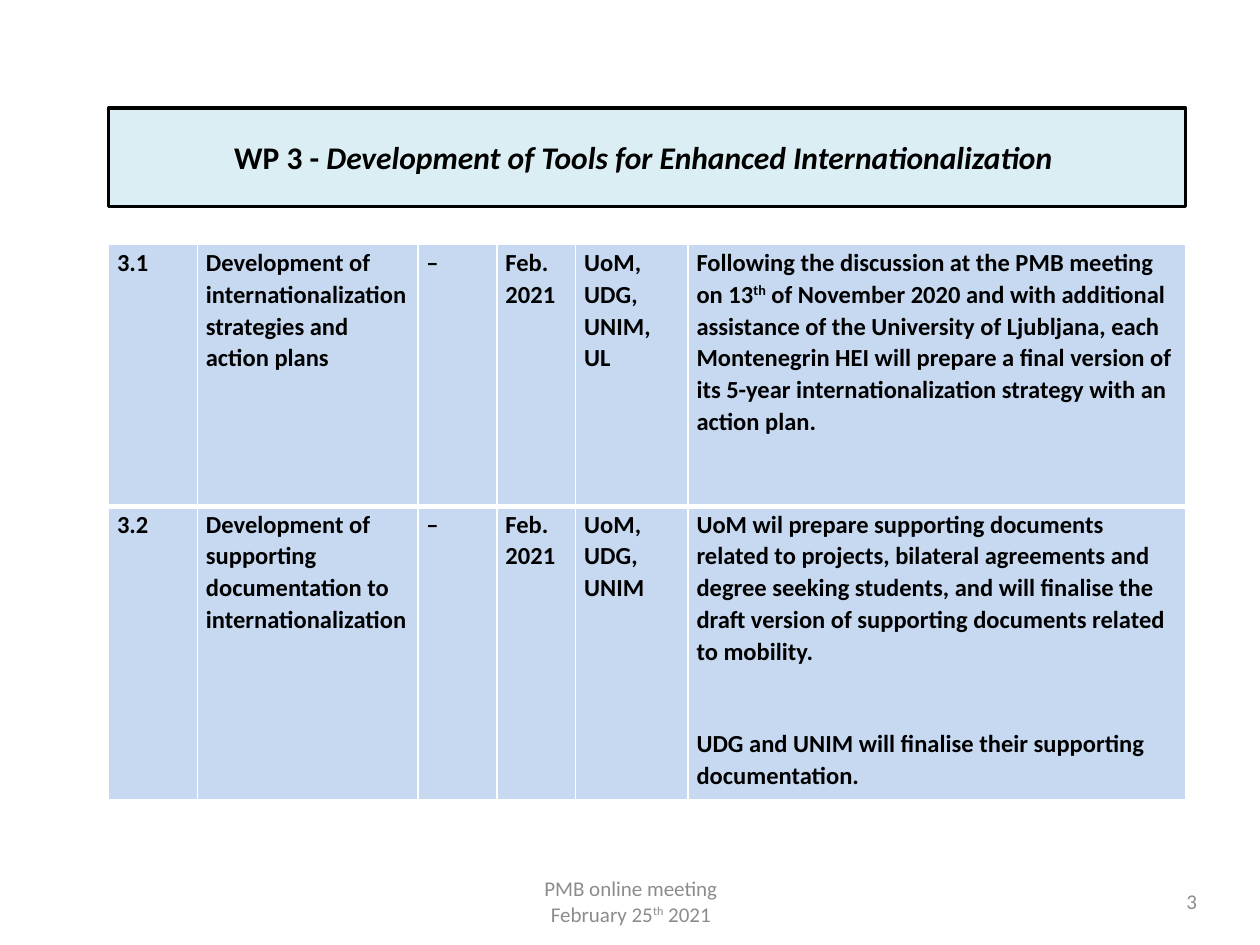
from dataclasses import dataclass

from lxml import etree
from pptx import Presentation
from pptx.dml.color import RGBColor
from pptx.enum.text import MSO_ANCHOR, MSO_AUTO_SIZE, PP_ALIGN
from pptx.oxml.ns import qn
from pptx.util import Pt

CENTER, LEFT, RIGHT = PP_ALIGN.CENTER, PP_ALIGN.LEFT, PP_ALIGN.RIGHT
MIDDLE = MSO_ANCHOR.MIDDLE
NO_AUTOFIT = MSO_AUTO_SIZE.NONE
TITLE_ONLY = 5

FONT = "Calibri"
COLORS = {
    "text": "000000",
    "footer": "8C8C8C",
    "title_fill": "DBEEF4",
    "cell_fill": "C6D9F1",
    "border": "FFFFFF",
}

LEFT_EDGE = 62
CONTENT_WIDTH = 615.5
TABLE_TOP = 139.8
COLUMN_WIDTHS = [50.8, 126, 45.2, 45, 64.2, 284.3]
ROW_HEIGHTS = [149.6, 167.8]
THIN, THICK = 1, 3
PARAGRAPH_GAP = 34.3


@dataclass
class Run:
    text: str
    italic: bool = False
    superscript: bool = False


@dataclass
class Style:
    size: float
    color: str
    bold: bool = False
    align: PP_ALIGN = LEFT


@dataclass
class Footer:
    left: float
    width: float
    inset_left: float
    style: Style
    paragraphs: list[list[Run]]


@dataclass
class Task:
    number: str
    name: str
    note: str
    deadline: str
    partners: str
    status: list[list[Run]]

    def cells(self) -> list[list[list[Run]]]:
        labels = (self.number, self.name, self.note, self.deadline, self.partners)
        return [[[Run(label)]] for label in labels] + [self.status]


TITLE_STYLE = Style(18, "text", bold=True, align=CENTER)
CELL_STYLE = Style(14, "text", bold=True)

TITLE = [
    Run("WP 3 - "),
    Run("Development of Tools for Enhanced Internationalization ", italic=True),
]

TASKS = [
    Task("3.1", "Development of internationalization strategies and action plans",
         "–", "Feb. 2021", "UoM, UDG, UNIM, UL",
         [[Run("Following the discussion at the PMB meeting on 13"),
           Run("th", superscript=True),
           Run(" of November 2020 and with additional assistance of the University "
               "of Ljubljana, each Montenegrin HEI will prepare a final version of "
               "its 5-year internationalization strategy with an action plan.")]]),
    Task("3.2", "Development of supporting documentation to internationalization",
         "–", "Feb. 2021", "UoM, UDG, UNIM",
         [[Run("UoM wil prepare supporting documents related to projects, bilateral "
               "agreements and degree seeking students, and will finalise the draft "
               "version of supporting documents related to mobility.")],
          [Run("UDG and UNIM will finalise their supporting documentation.")]]),
]

FOOTERS = [
    Footer(150.5, 420, 0, Style(12, "footer", align=CENTER),
           [[Run("PMB online meeting")],
            [Run("February 25"), Run("th", superscript=True), Run(" 2021")]]),
    Footer(575.3, 108.7, 7.2, Style(12, "footer", align=RIGHT), [[Run("3")]]),
]


def rgb(name: str) -> RGBColor:
    return RGBColor.from_string(COLORS[name])


def write(tf, paragraphs: list[list[Run]], style: Style) -> None:
    for i, runs in enumerate(paragraphs):
        p = tf.add_paragraph() if i else tf.paragraphs[0]
        p.alignment = style.align
        for run in runs:
            r = p.add_run()
            r.text = run.text
            r.font.name = FONT
            r.font.size = Pt(style.size)
            r.font.bold = style.bold
            r.font.italic = run.italic
            r.font.color.rgb = rgb(style.color)
            if run.superscript:
                r._r.get_or_add_rPr().set("baseline", "30000")


def set_borders(cell, top: float, bottom: float) -> None:
    tc_pr = cell._tc.get_or_add_tcPr()
    sides = {"a:lnL": THIN, "a:lnR": THIN, "a:lnT": top, "a:lnB": bottom}
    for tag, width in sides.items():
        ln = etree.SubElement(tc_pr, qn(tag), w=str(Pt(width)))
        fill = etree.SubElement(ln, qn("a:solidFill"))
        etree.SubElement(fill, qn("a:srgbClr"), val=COLORS["border"])


def add_title(slide) -> None:
    sp = slide.shapes.title
    sp.left, sp.top = Pt(LEFT_EDGE), Pt(61.7)
    sp.width, sp.height = Pt(CONTENT_WIDTH), Pt(56.2)
    sp.fill.solid()
    sp.fill.fore_color.rgb = rgb("title_fill")
    sp.line.color.rgb = rgb("text")
    sp.line.width = Pt(2)
    tf = sp.text_frame
    tf.auto_size = NO_AUTOFIT
    tf.vertical_anchor = MIDDLE
    write(tf, [TITLE], TITLE_STYLE)


def fill_cell(cell, paragraphs: list[list[Run]], top: float, bottom: float) -> None:
    set_borders(cell, top, bottom)
    cell.fill.solid()
    cell.fill.fore_color.rgb = rgb("cell_fill")
    cell.margin_left = cell.margin_right = Pt(4.9)
    cell.margin_top, cell.margin_bottom = Pt(0.7), Pt(0)
    write(cell.text_frame, paragraphs, CELL_STYLE)
    for p in cell.text_frame.paragraphs:
        p.line_spacing = 1.07
        p.space_after = Pt(8)
    if len(paragraphs) > 1:
        cell.text_frame.paragraphs[0].space_after = Pt(PARAGRAPH_GAP)


def add_task_table(slide, tasks: list[Task]) -> None:
    table = slide.shapes.add_table(
        len(tasks), len(COLUMN_WIDTHS), Pt(LEFT_EDGE), Pt(TABLE_TOP),
        Pt(sum(COLUMN_WIDTHS)), Pt(sum(ROW_HEIGHTS))).table
    table.first_row = table.horz_banding = False
    for column, width in zip(table.columns, COLUMN_WIDTHS):
        column.width = Pt(width)
    for i, (row, height, task) in enumerate(zip(table.rows, ROW_HEIGHTS, tasks)):
        row.height = Pt(height)
        top = THICK if i else THIN
        bottom = THICK if i < len(tasks) - 1 else THIN
        for cell, paragraphs in zip(row.cells, task.cells()):
            fill_cell(cell, paragraphs, top, bottom)


def add_footer(slide, footer: Footer) -> None:
    sp = slide.shapes.add_textbox(
        Pt(footer.left), Pt(500.5), Pt(footer.width), Pt(28.8))
    tf = sp.text_frame
    tf.word_wrap = True
    tf.vertical_anchor = MIDDLE
    tf.margin_left, tf.margin_right = Pt(footer.inset_left), Pt(0)
    write(tf, footer.paragraphs, footer.style)


def main() -> None:
    prs = Presentation()
    prs.slide_width, prs.slide_height = Pt(720), Pt(540)
    slide = prs.slides.add_slide(prs.slide_layouts[TITLE_ONLY])
    for footer in FOOTERS:
        add_footer(slide, footer)
    add_title(slide)
    add_task_table(slide, TASKS)
    prs.save("out.pptx")


if __name__ == "__main__":
    main()
